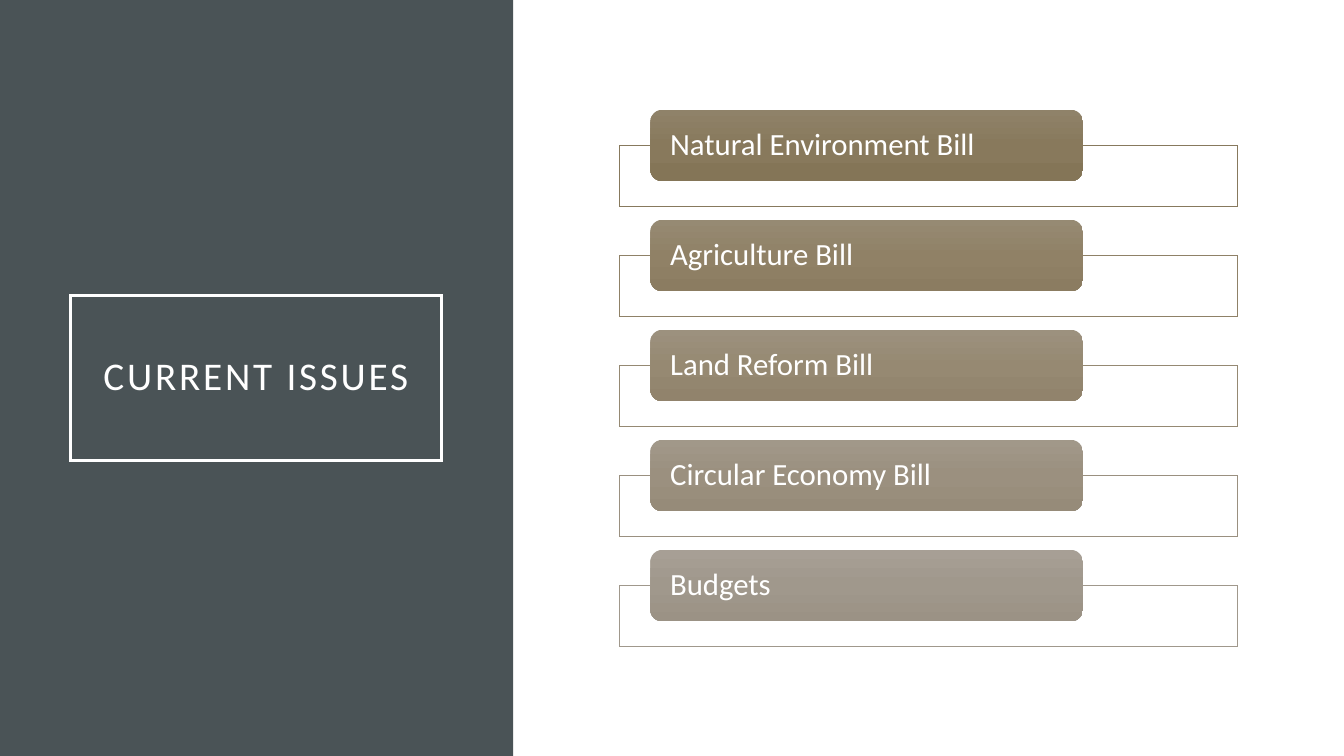
from lxml import etree
from pptx import Presentation
from pptx.dml.color import RGBColor
from pptx.enum.shapes import MSO_SHAPE
from pptx.enum.text import MSO_ANCHOR, MSO_AUTO_SIZE, PP_ALIGN
from pptx.oxml.ns import qn
from pptx.util import Pt

RECTANGLE = MSO_SHAPE.RECTANGLE
ROUNDED = MSO_SHAPE.ROUNDED_RECTANGLE
MIDDLE = MSO_ANCHOR.MIDDLE
NO_FIT = MSO_AUTO_SIZE.NONE
LEFT, CENTER = PP_ALIGN.LEFT, PP_ALIGN.CENTER

COLORS = {"panel": "4A5356", "white": "FFFFFF"}
FONT = "Calibri"
TITLE_ONLY = 5
FIRST_TOP, PITCH = 78.4, 78.6
ISSUES = [
    ("Natural Environment Bill", "87795D", ("8F8269", "88795C", "847557")),
    ("Agriculture Bill", "8F8167", ("968A73", "908166", "8B7C61")),
    ("Land Reform Bill", "958973", ("9C917E", "968972", "91836C")),
    ("Circular Economy Bill", "9A9080", ("A19889", "9B907F", "968B79")),
    ("Budgets", "A0988C", ("A79F95", "A0988C", "9B9285")),
]


def write_text(box, text, size, align=LEFT, insets=(0, 0), spacing=0):
    frame = box.text_frame
    frame.word_wrap = True
    frame.auto_size = NO_FIT
    frame.vertical_anchor = MIDDLE
    frame.margin_left = frame.margin_right = Pt(insets[0])
    frame.margin_top = frame.margin_bottom = Pt(insets[1])
    para = frame.paragraphs[0]
    para.alignment = align
    para.line_spacing = 0.9
    span = para.add_run()
    span.text = text
    span.font.name = FONT
    span.font.size = Pt(size)
    span.font.color.rgb = RGBColor.from_string(COLORS["white"])
    if spacing:
        span.font._element.set("spc", str(spacing * 100))


class SlideBuilder:
    def __init__(self, slide):
        self.slide = slide

    def outline(self, box, color, width):
        box.line.color.rgb = RGBColor.from_string(color)
        box.line.width = Pt(width)
        join = etree.SubElement(box.line._ln, qn("a:miter"))
        join.set("lim", "800000")

    def shape(self, kind, left, top, width, height):
        box = self.slide.shapes.add_shape(kind, Pt(left), Pt(top), Pt(width), Pt(height))
        box.shadow.inherit = False
        box.line.fill.background()
        return box

    def block(self, left, top, width, height, color):
        box = self.shape(RECTANGLE, left, top, width, height)
        box.fill.solid()
        box.fill.fore_color.rgb = RGBColor.from_string(color)
        return box

    def frame(self, left, top, width, height, color):
        box = self.block(left, top, width, height, COLORS["white"])
        tint = box._element.spPr.find(qn("a:solidFill")).find(qn("a:srgbClr"))
        etree.SubElement(tint, qn("a:alpha")).set("val", "90000")
        self.outline(box, color, 0.5)

    def label(self, left, top, width, height, text, shades):
        box = self.shape(ROUNDED, left, top, width, height)
        box.fill.gradient()
        box.fill.gradient_angle = 270
        stops = box._element.spPr.find(qn("a:gradFill")).find(qn("a:gsLst"))
        for stop in list(stops):
            stops.remove(stop)
        for index, shade in enumerate(shades):
            stop = etree.SubElement(stops, qn("a:gs"))
            stop.set("pos", str(index * 50000))
            etree.SubElement(stop, qn("a:srgbClr")).set("val", shade)
        write_text(box, text, 22, insets=(11.7, 0))

    def title(self, left, top, width, height, text):
        box = self.slide.shapes.title
        box.left, box.top, box.width, box.height = Pt(left), Pt(top), Pt(width), Pt(height)
        self.outline(box, COLORS["white"], 2.5)
        write_text(box, text, 28, align=CENTER, insets=(14.4, 14.4), spacing=2)
        self.slide.shapes._spTree.append(box._element)


def main():
    deck = Presentation()
    deck.slide_width, deck.slide_height = Pt(960), Pt(540)
    page = SlideBuilder(deck.slides.add_slide(deck.slide_layouts[TITLE_ONLY]))
    page.block(0, 0, 366.5, 540, COLORS["panel"])
    page.title(50.4, 211, 265, 118, "CURRENT ISSUES")
    for row, (text, line, shades) in enumerate(ISSUES):
        top = FIRST_TOP + row * PITCH
        page.frame(442.5, top + 25.5, 441.5, 43.7, line)
        page.label(464.5, top, 309, 51, text, shades)
    deck.save("out.pptx")


if __name__ == "__main__":
    main()
